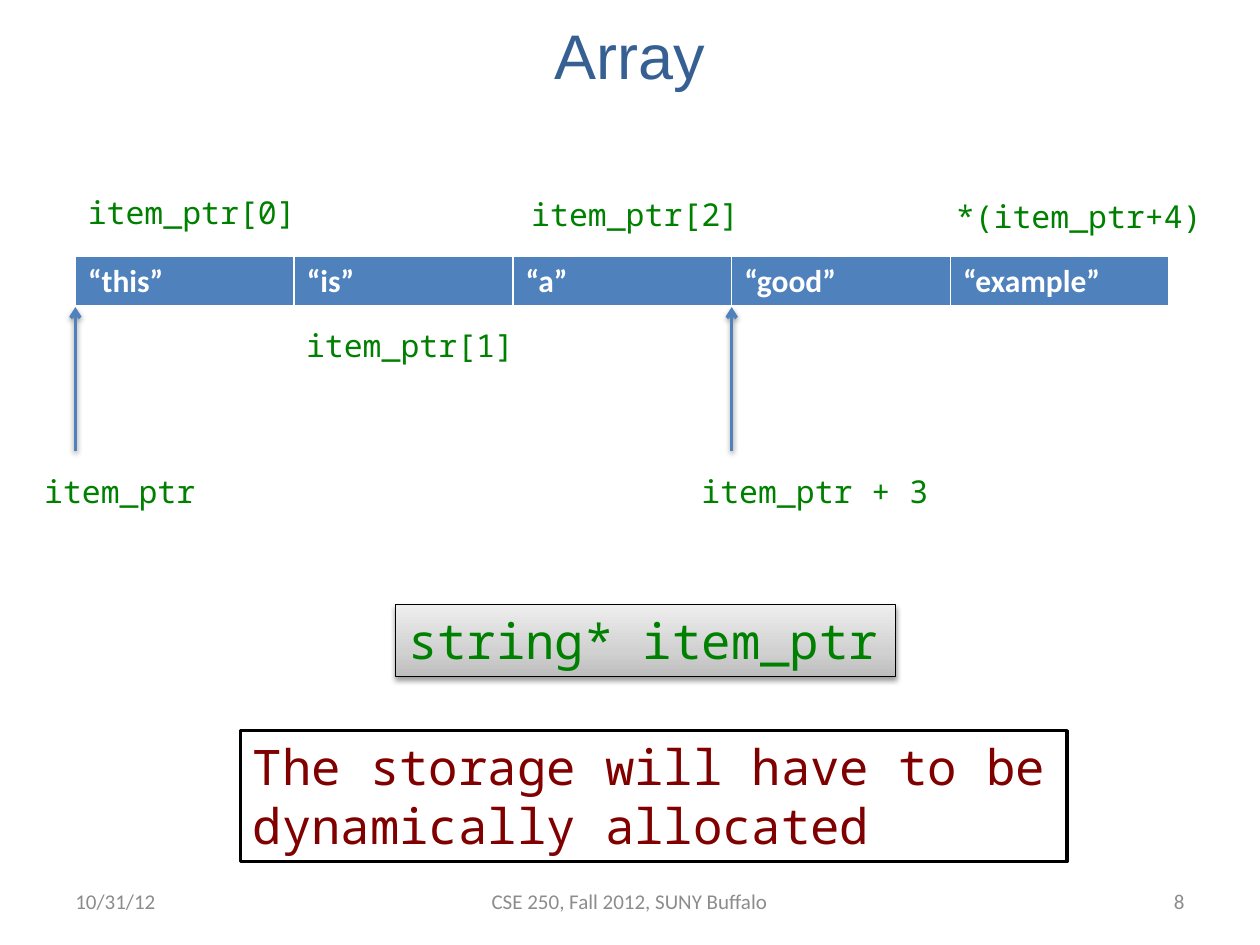
from copy import deepcopy
from dataclasses import dataclass

from lxml.etree import SubElement
from pptx import Presentation
from pptx.dml.color import RGBColor
from pptx.enum.shapes import MSO_CONNECTOR, MSO_SHAPE
from pptx.enum.text import MSO_ANCHOR, MSO_AUTO_SIZE, PP_ALIGN
from pptx.oxml.ns import qn
from pptx.util import Cm, Pt


@dataclass(frozen=True)
class Theme:
    title_color: str = "376092"
    accent: str = "4F81BD"
    code: str = "008000"
    note: str = "800000"
    footer: str = "8C8C8C"
    white: str = "FFFFFF"
    black: str = "000000"
    gradient: tuple = ((0, "BDBDBD"), (0.35, "D1D1D1"), (1, "EEEEEE"))
    title_font: str = "Arial"
    body_font: str = "Calibri"
    code_font: str = "Noto Sans Mono"
    title_size: int = 36
    large_size: int = 28
    body_size: int = 18
    footer_size: int = 12


THEME = Theme()
CELLS = ("“this”", "“is”", "“a”", "“good”", "“example”")
TABLE_LEFT, TABLE_TOP = 1.52, 5.16
CELL_WIDTH, CELL_HEIGHT = 4.41, 1.03
TABLE_BOTTOM = TABLE_TOP + CELL_HEIGHT
ARROW_LENGTH = 2.9
LABEL_HEIGHT = 1.03


def rgb(color):
    return RGBColor.from_string(color)


def write_text(frame, text, *, font=THEME.code_font, size=THEME.body_size,
               color=THEME.code, bold=False, align=PP_ALIGN.LEFT):
    for index, line in enumerate(text.split("\n")):
        para = frame.paragraphs[0] if index == 0 else frame.add_paragraph()
        para.alignment = align
        span = para.add_run()
        span.text = line
        span.font.name = font
        span.font.size = Pt(size)
        span.font.bold = bold
        span.font.color.rgb = rgb(color)


def add_fixed_text(page, text, left, top, width, height, **style):
    frame = page.shapes.add_textbox(Cm(left), Cm(top), Cm(width), Cm(height)).text_frame
    frame.word_wrap = True
    frame.vertical_anchor = MSO_ANCHOR.MIDDLE
    write_text(frame, text, **style)


def fit_to_text(frame):
    frame.word_wrap = False
    frame.auto_size = MSO_AUTO_SIZE.SHAPE_TO_FIT_TEXT
    frame.vertical_anchor = MSO_ANCHOR.TOP


def add_label(page, text, left, top, width):
    box = page.shapes.add_textbox(Cm(left), Cm(top), Cm(width), Cm(LABEL_HEIGHT))
    fit_to_text(box.text_frame)
    write_text(box.text_frame, text)


def add_framed_text(page, text, left, top, width, height, *, border, color):
    box = page.shapes.add_shape(
        MSO_SHAPE.RECTANGLE, Cm(left), Cm(top), Cm(width), Cm(height))
    box.shadow.inherit = False
    box.line.color.rgb = rgb(THEME.black)
    box.line.width = Pt(border)
    box.fill.solid()
    box.fill.fore_color.rgb = rgb(THEME.white)
    fit_to_text(box.text_frame)
    write_text(box.text_frame, text, size=THEME.large_size, color=color)
    return box


def apply_gradient(box):
    box.fill.gradient()
    box.fill.gradient_angle = 90
    stop_list = next(box.element.spPr.iter(qn("a:gsLst")))
    stop_list.append(deepcopy(stop_list[0]))
    for stop, (position, color) in zip(box.fill.gradient_stops, THEME.gradient):
        stop.position = position
        stop.color.rgb = rgb(color)


def add_soft_shadow(properties):
    effects = properties.find(qn("a:effectLst"))
    if effects is None:
        effects = SubElement(properties, qn("a:effectLst"))
    shadow = SubElement(effects, qn("a:outerShdw"), blurRad="40000", dist="20000",
                        dir="5400000", rotWithShape="0")
    color = SubElement(shadow, qn("a:srgbClr"), val=THEME.black)
    SubElement(color, qn("a:alpha"), val="38000")


def add_pointer(page, column):
    center = Cm(TABLE_LEFT + column * CELL_WIDTH)
    pointer = page.shapes.add_connector(
        MSO_CONNECTOR.STRAIGHT, center, Cm(TABLE_BOTTOM + ARROW_LENGTH),
        center, Cm(TABLE_BOTTOM))
    pointer.line.color.rgb = rgb(THEME.accent)
    pointer.line.width = Pt(2)
    properties = pointer.element.spPr
    SubElement(properties.find(qn("a:ln")), qn("a:tailEnd"), type="arrow")
    add_soft_shadow(properties)


def add_cell_borders(cell):
    properties = cell._tc.get_or_add_tcPr()
    for side, width in (("L", 1), ("R", 1), ("T", 1), ("B", 3)):
        border = SubElement(properties, qn(f"a:ln{side}"), w=str(int(Pt(width))))
        fill = SubElement(border, qn("a:solidFill"))
        SubElement(fill, qn("a:srgbClr"), val=THEME.white)


def add_array(page):
    table = page.shapes.add_table(
        1, len(CELLS), Cm(TABLE_LEFT), Cm(TABLE_TOP),
        Cm(CELL_WIDTH * len(CELLS)), Cm(CELL_HEIGHT)).table
    for column, text in enumerate(CELLS):
        table.columns[column].width = Cm(CELL_WIDTH)
        cell = table.cell(0, column)
        add_cell_borders(cell)
        cell.fill.solid()
        cell.fill.fore_color.rgb = rgb(THEME.accent)
        write_text(cell.text_frame, text, font=THEME.body_font,
                   color=THEME.white, bold=True)


def add_footer(page):
    for text, left, width, align in (
        ("10/31/12", 1.27, 5.92, PP_ALIGN.LEFT),
        ("CSE 250, Fall 2012, SUNY Buffalo", 7.42, 10.54, PP_ALIGN.CENTER),
        ("8", 18.21, 5.92, PP_ALIGN.RIGHT),
    ):
        add_fixed_text(page, text, left, 17.65, width, 1.02, font=THEME.body_font,
                       size=THEME.footer_size, color=THEME.footer, align=align)


def main():
    deck = Presentation()
    deck.slide_width, deck.slide_height = Cm(25.4), Cm(19.05)
    page = deck.slides.add_slide(deck.slide_layouts[6])
    add_fixed_text(page, "Array", 0, 0.18, 25.4, 1.85, font=THEME.title_font,
                   size=THEME.title_size, color=THEME.title_color,
                   align=PP_ALIGN.CENTER)
    add_array(page)
    for column in (0, 3):
        add_pointer(page, column)
    for text, left, top, width in (
        ("item_ptr", 0.64, 9.4, 3.58),
        ("item_ptr[0]", 1.52, 3.76, 4.75),
        ("item_ptr[1]", 5.92, 6.45, 4.75),
        ("item_ptr[2]", 10.46, 3.81, 4.75),
        ("item_ptr + 3", 13.89, 9.4, 5.13),
        ("*(item_ptr+4)", 19.02, 3.84, 5.51),
    ):
        add_label(page, text, left, top, width)
    declaration = add_framed_text(page, "string* item_ptr", 7.98, 12.19, 10.08, 1.45,
                                  border=0.75, color=THEME.code)
    apply_gradient(declaration)
    add_soft_shadow(declaration.element.spPr)
    add_framed_text(page, "The storage will have to be\ndynamically allocated",
                    4.85, 14.73, 16.66, 2.64, border=2, color=THEME.note)
    add_footer(page)
    deck.save("out.pptx")


if __name__ == "__main__":
    main()
